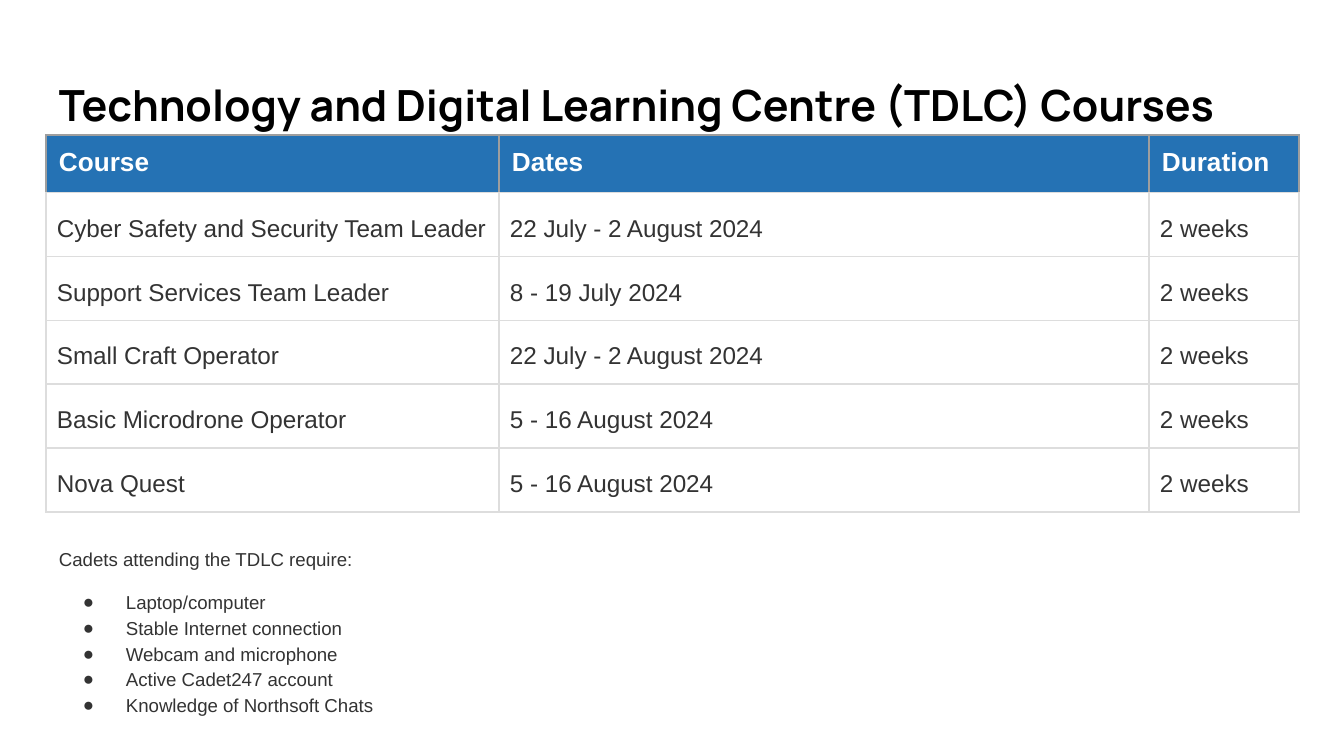
from lxml.etree import SubElement
from pptx import Presentation
from pptx.dml.color import RGBColor
from pptx.enum.text import MSO_ANCHOR
from pptx.oxml.ns import qn
from pptx.util import Pt

SLIDE_WIDTH, SLIDE_HEIGHT = 1344, 756
EMU_PER_PX = 9144000 / SLIDE_WIDTH
COLORS = {
    "title": "000000",
    "header": "2572B4",
    "header_text": "FFFFFF",
    "header_border": "9E9E9E",
    "border": "DDDDDD",
    "text": "333333",
}
COLUMN_WIDTHS = [453, 650, 150]
ROW_HEIGHT = 56
COURSES = [
    ("Course", "Dates", "Duration"),
    ("Cyber Safety and Security Team Leader", "22 July - 2 August 2024", "2 weeks"),
    ("Support Services Team Leader", "8 - 19 July 2024", "2 weeks"),
    ("Small Craft Operator", "22 July - 2 August 2024", "2 weeks"),
    ("Basic Microdrone Operator", "5 - 16 August 2024", "2 weeks"),
    ("Nova Quest", "5 - 16 August 2024", "2 weeks"),
]
REQUIREMENTS_INTRO = "Cadets attending the TDLC require:"
REQUIREMENTS = [
    "Laptop/computer",
    "Stable Internet connection",
    "Webcam and microphone",
    "Active Cadet247 account",
    "Knowledge of Northsoft Chats",
]


def px(length):
    return round(length * EMU_PER_PX)


def rgb(name):
    return RGBColor.from_string(COLORS[name])


def style_font(paragraph, size, color, name="Arial", bold=False):
    font = paragraph.font
    font.name, font.size, font.bold = name, Pt(size), bold
    font.color.rgb = rgb(color)


def set_margins(frame, margin):
    """Set equal margins on a text frame or a table cell."""
    frame.margin_left = frame.margin_right = px(margin)
    frame.margin_top = frame.margin_bottom = px(margin)


def add_text_frame(slide, box):
    frame = slide.shapes.add_textbox(*map(px, box)).text_frame
    frame.word_wrap = True
    frame.vertical_anchor = MSO_ANCHOR.TOP
    set_margins(frame, 13)
    return frame


def add_title(slide, box, text):
    paragraph = add_text_frame(slide, box).paragraphs[0]
    paragraph.text = text
    style_font(paragraph, 23, "title", "Manrope", bold=True)


def set_borders(cell, **side_colors):
    properties = cell._tc.get_or_add_tcPr()
    for side, color in side_colors.items():
        line = SubElement(properties, qn(f"a:ln{side}"), w=str(Pt(0.75)))
        fill = SubElement(line, qn("a:solidFill"))
        SubElement(fill, qn("a:srgbClr"), val=COLORS[color])


def style_header_cell(cell):
    set_margins(cell, 13)
    edge = "header_border"
    set_borders(cell, L=edge, R=edge, T=edge, B="border")
    cell.fill.solid()
    cell.fill.fore_color.rgb = rgb("header")
    style_font(cell.text_frame.paragraphs[0], 14, "header_text", bold=True)


def style_body_cell(cell):
    set_margins(cell, 11)
    set_borders(cell, **dict.fromkeys("LRTB", "border"))
    cell.fill.background()
    paragraph = cell.text_frame.paragraphs[0]
    paragraph.line_spacing = 1.44
    paragraph.space_after = Pt(17)
    style_font(paragraph, 13, "text")


def add_course_table(slide, left, top):
    size = sum(COLUMN_WIDTHS), ROW_HEIGHT * len(COURSES)
    table = slide.shapes.add_table(
        len(COURSES), len(COLUMN_WIDTHS), *map(px, (left, top, *size))
    ).table
    table.horz_banding = table.first_row = False
    for column, width in zip(table.columns, COLUMN_WIDTHS):
        column.width = px(width)
    for row_index, (row, texts) in enumerate(zip(table.rows, COURSES)):
        row.height = px(ROW_HEIGHT)
        for cell, text in zip(row.cells, texts):
            cell.text = text
            if row_index == 0:
                style_header_cell(cell)
            else:
                style_body_cell(cell)


def add_bullet(paragraph):
    properties = paragraph._p.get_or_add_pPr()
    properties.set("marL", str(px(67)))
    properties.set("indent", str(px(-43)))
    color = SubElement(properties, qn("a:buClr"))
    SubElement(color, qn("a:srgbClr"), val=COLORS["text"])
    SubElement(properties, qn("a:buFont"), typeface="Arial")
    SubElement(properties, qn("a:buChar"), char="●")


def add_requirements(slide, box):
    frame = add_text_frame(slide, box)
    frame.text = "\n".join([REQUIREMENTS_INTRO, *REQUIREMENTS])
    intro, *items = frame.paragraphs
    items[0].space_before = Pt(9)
    for paragraph in frame.paragraphs:
        paragraph.line_spacing = 1.15
        style_font(paragraph, 10, "text")
    for item in items:
        add_bullet(item)


def main():
    presentation = Presentation()
    presentation.slide_width = px(SLIDE_WIDTH)
    presentation.slide_height = px(SLIDE_HEIGHT)
    slide = presentation.slides.add_slide(presentation.slide_layouts[6])
    add_title(
        slide, (46, 66, 1252, 91),
        "Technology and Digital Learning Centre (TDLC) Courses",
    )
    add_course_table(slide, 46, 135)
    add_requirements(slide, (46, 532, 930, 196))
    presentation.save("out.pptx")


if __name__ == "__main__":
    main()
